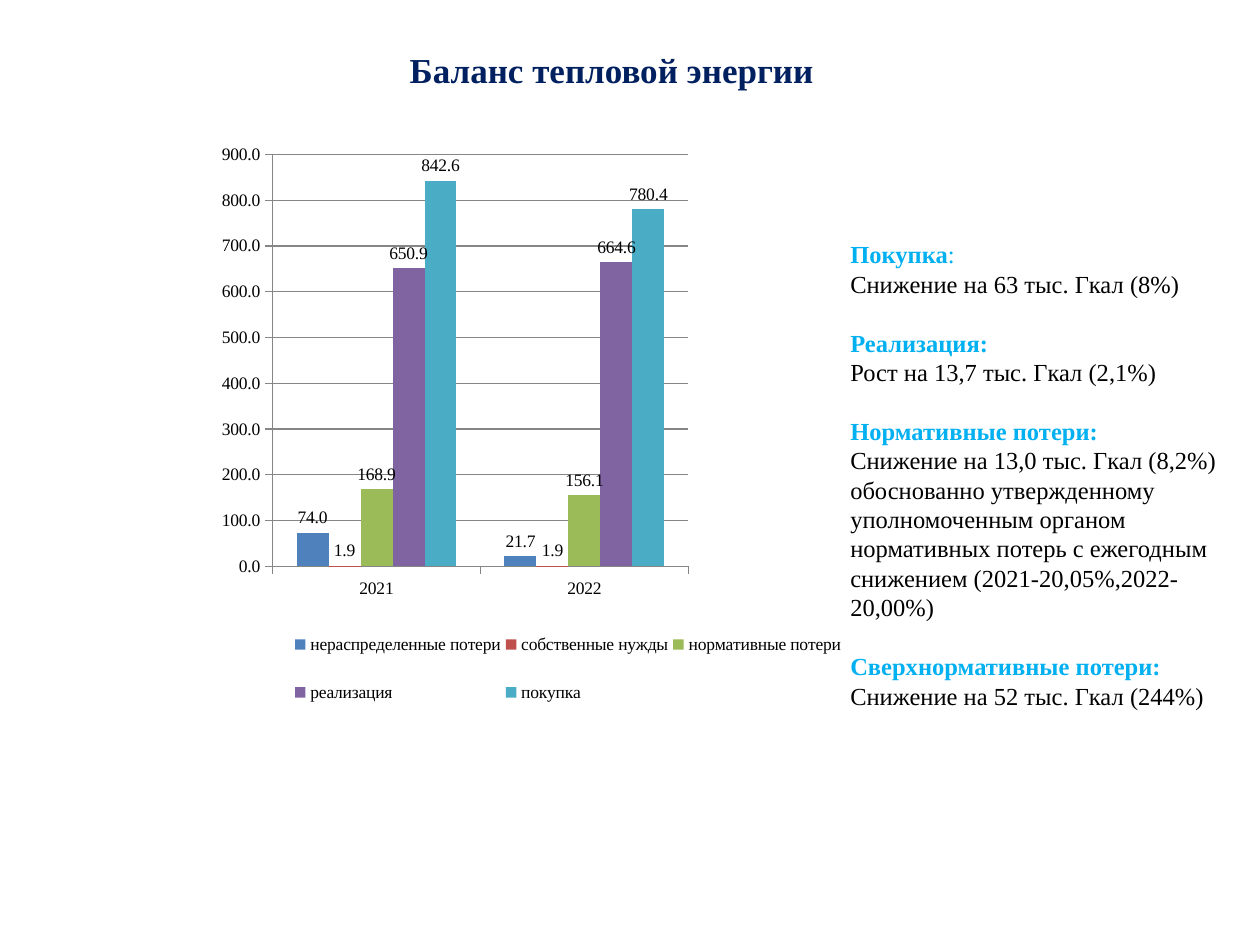
from dataclasses import dataclass

from lxml import etree
from pptx import Presentation
from pptx import util as u
from pptx.chart.data import CategoryChartData
from pptx.dml.color import RGBColor
from pptx.enum import chart as ch
from pptx.enum import text
from pptx.oxml import parse_xml
from pptx.oxml.ns import nsdecls

COLS, ROWS = 100, 75


@dataclass(frozen=True)
class Theme:
    font: str = "Times New Roman"
    title: str = "002060"
    heading: str = "00B0F0"
    ink: str = "000000"
    grid: str = "868686"
    series: tuple = ("4F81BD", "C0504D", "9BBB59", "8064A2", "4BACC6")
    title_pt: int = 20
    body_pt: int = 14
    chart_pt: int = 10
    line_pt: float = 16.8


TITLE = "Баланс тепловой энергии"
YEARS = ("2021", "2022")
BALANCE = {
    "нераспределенные потери": (74.0, 21.7),
    "собственные нужды": (1.9, 1.9),
    "нормативные потери": (168.9, 156.1),
    "реализация": (650.9, 664.6),
    "покупка": (842.6, 780.4),
}
# heading, its closing mark in regular weight, comment
CHANGES = (
    ("Покупка", ":", "Снижение на 63 тыс. Гкал (8%)"),
    ("Реализация:", "", "Рост на 13,7 тыс. Гкал (2,1%)"),
    ("Нормативные потери:", "",
     "Снижение на 13,0 тыс. Гкал (8,2%) обоснованно утвержденному "
     "уполномоченным органом нормативных потерь с ежегодным снижением "
     "(2021-20,05%,2022-20,00%)"),
    ("Сверхнормативные потери:", "", "Снижение на 52 тыс. Гкал (244%)"),
)


class Deck:
    def __init__(self, theme):
        self.theme = theme
        self.prs = Presentation()
        self.prs.slide_width, self.prs.slide_height = u.Inches(10), u.Inches(7.5)
        self.s = self.prs.slides.add_slide(self.prs.slide_layouts[5])

    def box(self, col, row, cols, rows):
        """Turn grid columns and rows into left, top, width, height."""
        cw, rh = self.prs.slide_width / COLS, self.prs.slide_height / ROWS
        return int(col * cw), int(row * rh), int(cols * cw), int(rows * rh)

    def style(self, font, size, color, bold=False):
        font.name, font.size, font.bold = self.theme.font, u.Pt(size), bold
        font.color.rgb = RGBColor.from_string(color)

    def title(self, words, *cell):
        sp = self.s.shapes.title
        sp.left, sp.top, sp.width, sp.height = self.box(*cell)
        tf = sp.text_frame
        tf.text = words
        tf.vertical_anchor = text.MSO_ANCHOR.MIDDLE
        p = tf.paragraphs[0]
        p.alignment = text.PP_ALIGN.CENTER
        self.style(p.runs[0].font, self.theme.title_pt, self.theme.title, True)

    def notes(self, items, *cell):
        """Write headings, each followed by its comment, in one text box."""
        t = self.theme
        tf = self.s.shapes.add_textbox(*self.box(*cell)).text_frame
        tf.word_wrap = True
        for i, (heading, mark, comment) in enumerate(items):
            p = tf.add_paragraph() if i else tf.paragraphs[0]
            p.space_before = u.Pt(t.line_pt if i else 0)
            p.line_spacing = u.Pt(t.line_pt)
            for words, bold in ((heading, True), (mark, False)):
                if words:
                    r = p.add_run()
                    r.text = words
                    self.style(r.font, t.body_pt, t.heading, bold)
            p = tf.add_paragraph()
            p.text = comment
            p.line_spacing = u.Pt(t.line_pt)
            self.style(p.runs[0].font, t.body_pt, t.ink)

    def columns(self, categories, series, plot, legend, *cell):
        """Add a column chart; plot and legend are percentages of its area."""
        t = self.theme
        data = CategoryChartData(number_format="0.0")
        data.categories = categories
        for name, values in series.items():
            data.add_series(name, values)
        chart = self.s.shapes.add_chart(
            ch.XL_CHART_TYPE.COLUMN_CLUSTERED, *self.box(*cell), data).chart
        chart.has_title = False
        self.style(chart.font, t.chart_pt, t.ink)
        bars = chart.plots[0]
        bars.gap_width, bars.overlap, bars.vary_by_categories = 150, 0, False
        for ser, color in zip(bars.series, t.series):
            ser.format.fill.solid()
            ser.format.fill.fore_color.rgb = RGBColor.from_string(color)
        bars.has_data_labels = True
        labels = bars.data_labels
        labels.show_value = True
        labels.number_format, labels.number_format_is_linked = "0.0", False
        labels.position = ch.XL_LABEL_POSITION.OUTSIDE_END
        val, cat = chart.value_axis, chart.category_axis
        val.minimum_scale, val.maximum_scale, val.major_unit = 0, 900, 100
        val.tick_labels.number_format = "0.0"
        val.tick_labels.number_format_is_linked = False
        for part in (val, cat, val.major_gridlines):
            part.format.line.color.rgb = RGBColor.from_string(t.grid)
            part.format.line.width = u.Pt(0.75)
        for axis in (val, cat):
            axis.major_tick_mark = ch.XL_TICK_MARK.OUTSIDE
        chart.has_legend = True
        chart.legend.position = ch.XL_LEGEND_POSITION.RIGHT
        chart.legend.include_in_layout = False
        self.place(bars._element.getparent(), plot, inner=True)
        self.place(chart.legend._element, legend)

    def place(self, element, percents, inner=False):
        """Give a chart part a manual layout."""
        c = "{http://schemas.openxmlformats.org/drawingml/2006/chart}"
        for old in element.findall(c + "layout"):
            element.remove(old)
        layout = parse_xml(f'<c:layout {nsdecls("c")}><c:manualLayout/></c:layout>')
        rules = [("layoutTarget", "inner")] if inner else []
        rules += [("xMode", "edge"), ("yMode", "edge")]
        rules += [(tag, value / 100) for tag, value in zip("xywh", percents)]
        for tag, value in rules:
            etree.SubElement(layout[0], c + tag).set("val", str(value))
        before = element.find(c + "legendPos")
        element.insert(0 if before is None else element.index(before) + 1, layout)


def main():
    deck = Deck(Theme())
    deck.title(TITLE, 16.1, 0, 64.9, 11.1)
    deck.columns(YEARS, BALANCE, (11.5, 2.3, 60.9, 64.9),
                 (14, 73.5, 81.5, 19.5), 15.4, 11.1, 54.2, 50.4)
    deck.notes(CHANGES, 66.5, 18.5, 31.4, 38.7)
    deck.prs.save("out.pptx")


if __name__ == "__main__":
    main()
